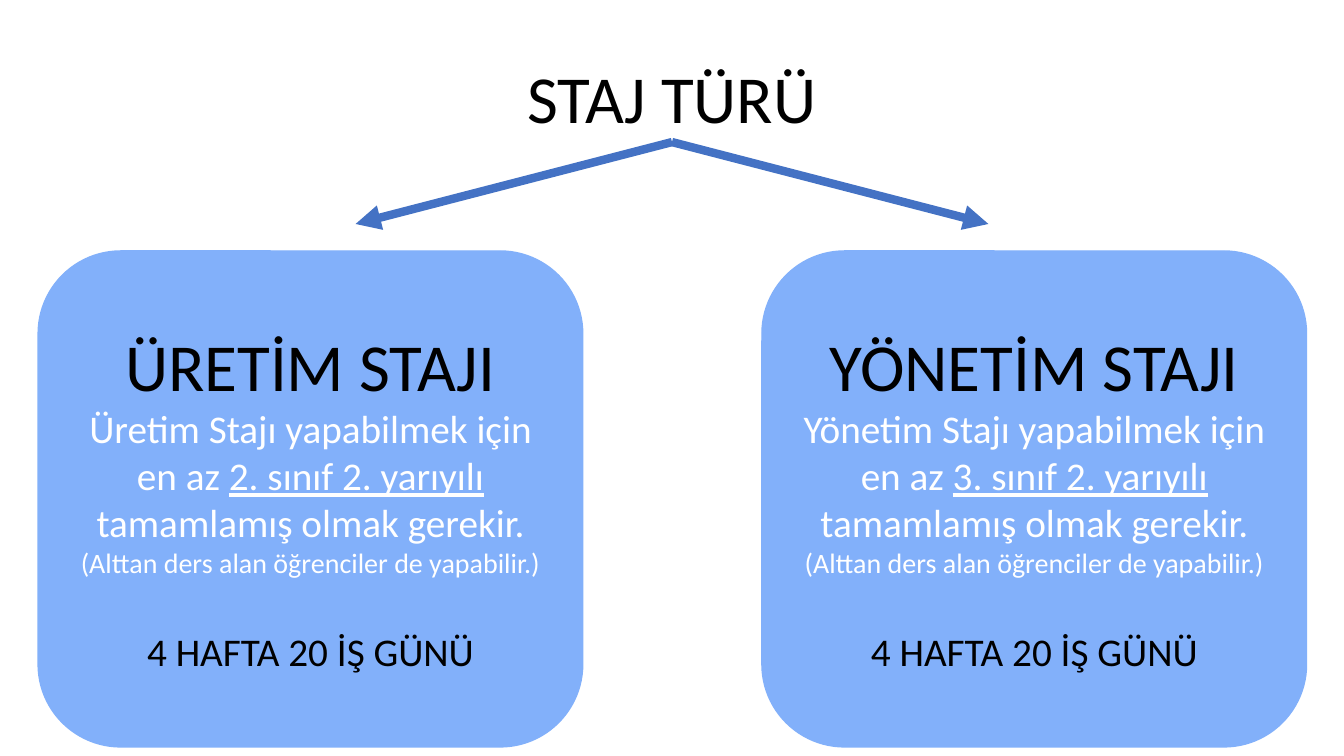
import pptx
import pptx.util
import pptx.dml.color
import pptx.enum.shapes
import pptx.enum.text
import pptx.oxml
import pptx.oxml.ns

Pt = pptx.util.Pt
CENTER = pptx.enum.text.PP_ALIGN.CENTER
MIDDLE = pptx.enum.text.MSO_ANCHOR.MIDDLE


def paint(fmt, color):
    """Set a solid colour on a fill."""
    fmt.solid()
    fmt.fore_color.rgb = pptx.dml.color.RGBColor.from_string(color)


def add_run(p, text, size, color, underline=False):
    """Add one formatted run to a paragraph."""
    r = p.add_run()
    r.text = text
    r.font.name = "Calibri"
    r.font.size = Pt(size)
    r.font.underline = underline
    paint(r.font.fill, color)


def add_title(s, text, left, top, width, height):
    """Place the title placeholder in the given box."""
    sp = s.shapes.title
    sp.left, sp.top, sp.width, sp.height = map(Pt, (left, top, width, height))
    tf = sp.text_frame
    tf.auto_size = pptx.enum.text.MSO_AUTO_SIZE.NONE
    tf.vertical_anchor = MIDDLE
    p = tf.paragraphs[0]
    p.alignment = CENTER
    add_run(p, text, 48, "000000")
    return sp


def add_arrow(s, title, x, y):
    """Draw an arrow from the bottom of the title to a point."""
    line = s.shapes.add_connector(
        pptx.enum.shapes.MSO_CONNECTOR.STRAIGHT,
        title.left + title.width // 2, title.top + title.height, Pt(x), Pt(y))
    line.begin_connect(title, 2)
    line.line.width = Pt(6)
    paint(line.line.fill, "4472C4")
    ln = line.line._get_or_add_ln()
    tail = pptx.oxml.parse_xml(
        "<a:tailEnd %s type='triangle'/>" % pptx.oxml.ns.nsdecls("a"))
    ln.append(tail)
    effects = pptx.oxml.parse_xml("<a:effectLst %s/>" % pptx.oxml.ns.nsdecls("a"))
    ln.addnext(effects)


def add_card(s, heading, subject, term, left, top, width, height):
    """Draw one internship card in the given box."""
    sp = s.shapes.add_shape(
        pptx.enum.shapes.MSO_SHAPE.ROUNDED_RECTANGLE,
        Pt(left), Pt(top), Pt(width), Pt(height))
    sp.shadow.inherit = False
    paint(sp.fill, "82B0FA")
    paint(sp.line.fill, "82B0FA")
    sp.line.width = Pt(1)
    tf = sp.text_frame
    tf.word_wrap = True
    tf.vertical_anchor = MIDDLE
    rows = [
        [(heading, 48, "000000")],
        [(subject + " yapabilmek için en az ", 28, "FFFFFF"),
         (term + " ", 28, "FFFFFF", True),
         ("tamamlamış olmak gerekir.", 28, "FFFFFF")],
        [("(Alttan ders alan öğrenciler de yapabilir.)", 20, "FFFFFF")],
        [("4 HAFTA 20 İŞ GÜNÜ", 28, "000000")],
    ]
    for i, row in enumerate(rows):
        p = tf.add_paragraph() if i else tf.paragraphs[0]
        p.alignment = CENTER
        for run in row:
            add_run(p, *run)
    p.space_before = Pt(34)


def add_internship_slide(prs):
    """Build the slide that splits internships into two types."""
    s = prs.slides.add_slide(prs.slide_layouts[5])
    title = add_title(s, "STAJ TÜRÜ", 359, 36, 242, 65.5)
    cards = [("ÜRETİM STAJI", "Üretim Stajı", "2. sınıf 2. yarıyılı"),
             ("YÖNETİM STAJI", "Yönetim Stajı", "3. sınıf 2. yarıyılı")]
    for i, card in enumerate(cards):
        add_arrow(s, title, 254 + 452 * i, 160)
        add_card(s, *card, 27.25 + 517 * i, 179.25, 389, 354.25)


def main():
    """Create and save the presentation."""
    prs = pptx.Presentation()
    prs.slide_width, prs.slide_height = Pt(960), Pt(540)
    add_internship_slide(prs)
    prs.save("out.pptx")


if __name__ == "__main__":
    main()
